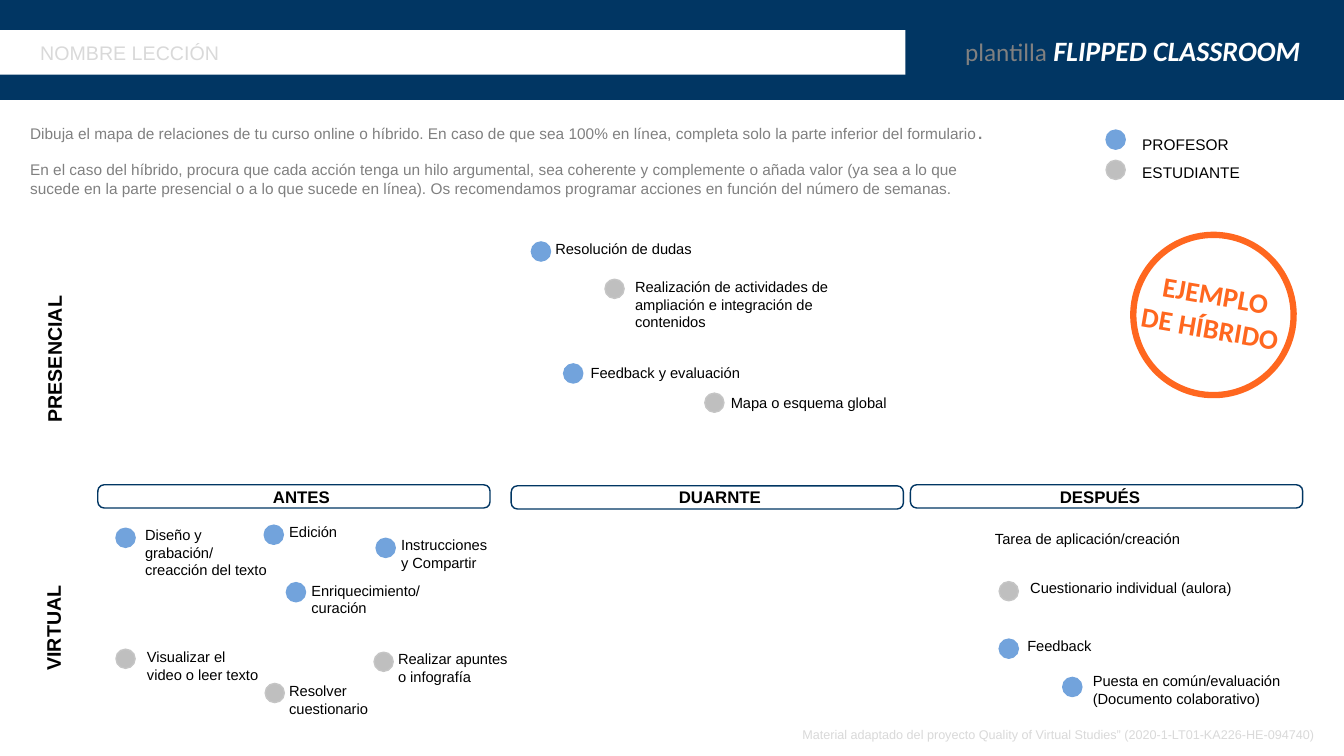
from dataclasses import dataclass

from pptx import Presentation
from pptx.dml.color import RGBColor
from pptx.enum.shapes import MSO_SHAPE
from pptx.enum.text import MSO_ANCHOR, MSO_AUTO_SIZE, PP_ALIGN
from pptx.util import Inches, Pt


@dataclass(frozen=True)
class Theme:
    navy: str = "013663"
    white: str = "FFFFFF"
    black: str = "000000"
    gray: str = "808080"
    pale: str = "D9D9D9"
    orange: str = "FF671F"
    blue: str = "72A3DC"
    silver: str = "BFBFBF"
    rim: str = "C5C5C5"
    sans: str = "Arial"
    head: str = "Calibri"
    big: float = 20
    brand: float = 18
    side: float = 14
    phase: float = 12
    body: float = 11
    item: float = 10.5
    foot: float = 9


class Board:
    def __init__(self, slide, theme):
        self.slide = slide
        self.theme = theme

    def font(self, run, size, color, bold=False, name=None, italic=False):
        font = run.font
        font.name = name or self.theme.sans
        font.size = Pt(size)
        font.bold = bold
        font.italic = italic
        font.color.rgb = RGBColor.from_string(color)

    def shape(self, kind, box, fill=None, line=None, width=1):
        shape = self.slide.shapes.add_shape(kind, *map(Inches, box))
        shape.shadow.inherit = False
        if fill:
            shape.fill.solid()
            shape.fill.fore_color.rgb = RGBColor.from_string(fill)
        else:
            shape.fill.background()
        if line:
            shape.line.color.rgb = RGBColor.from_string(line)
            shape.line.width = Pt(width)
        else:
            shape.line.fill.background()
        return shape

    def text(self, box, words, size, color=None, bold=False, name=None,
             align=PP_ALIGN.LEFT, turn=0):
        shape = self.slide.shapes.add_textbox(*map(Inches, box))
        shape.rotation = turn
        frame = shape.text_frame
        frame.word_wrap = True
        frame.auto_size = MSO_AUTO_SIZE.SHAPE_TO_FIT_TEXT
        frame.text = words
        for par in frame.paragraphs:
            par.alignment = align
            for run in par.runs:
                self.font(run, size, color or self.theme.black, bold, name)
        return frame

    def title(self, box, parts):
        """Fill the title placeholder and lift it above the header band."""
        title = self.slide.shapes.title
        title.left, title.top, title.width, title.height = map(Inches, box)
        frame = title.text_frame
        frame.auto_size = MSO_AUTO_SIZE.NONE
        frame.vertical_anchor = MSO_ANCHOR.TOP
        par = frame.paragraphs[0]
        par.alignment = PP_ALIGN.RIGHT
        for words, size, color, bold, italic in parts:
            run = par.add_run()
            run.text = words
            self.font(run, size, color, bold, self.theme.head, italic)
        title.element.getparent().append(title.element)

    def dot(self, role, left, top):
        look = self.theme
        fill, line = {"teacher": (look.blue, look.blue),
                      "student": (look.silver, look.rim)}[role]
        self.shape(MSO_SHAPE.OVAL, (left, top, 0.19, 0.19), fill, line)

    def phase(self, words, left, top, mid):
        bar = self.shape(MSO_SHAPE.ROUNDED_RECTANGLE, (left, top, 3.89, 0.23),
                         line=self.theme.navy)
        bar.adjustments[0] = 0.27
        self.text((mid - 1.34, 4.78, 2.68, 0.3), words, self.theme.phase,
                  bold=True, align=PP_ALIGN.CENTER)

    def stamp(self, words, turn=9.8):
        look = self.theme
        ring = self.shape(MSO_SHAPE.OVAL, (11.24, 2.33, 1.59, 1.59),
                          line=look.orange, width=4.5)
        ring.rotation = turn
        frame = self.text((11.24, 2.8, 1.58, 0.57), words, look.big,
                          look.orange, True, look.head, PP_ALIGN.CENTER, turn)
        frame.vertical_anchor = MSO_ANCHOR.MIDDLE
        frame.margin_left = frame.margin_right = 0
        frame.margin_top = frame.margin_bottom = Inches(0.01)


INTRO = (
    "Dibuja el mapa de relaciones de tu curso online o híbrido. En caso de "
    "que sea 100% en línea, completa solo la parte inferior del formulario\n"
    "En el caso del híbrido, procura que cada acción tenga un hilo argumental, "
    "sea coherente y complemente o añada valor (ya sea a lo que sucede en la "
    "parte presencial o a lo que sucede en línea). Os recomendamos programar "
    "acciones en función del número de semanas."
)

PHASES = [("ANTES", 0.97, 4.81, 2.99), ("DUARNTE", 5.07, 4.82, 7.14),
          ("DESPUÉS", 9.03, 4.81, 10.91)]

# Words, text box, role, dot left and top
TASKS = [
    ("Resolución de dudas", (5.41, 2.33, 1.92, 0.29), "teacher", 5.27, 2.4),
    ("Realización de actividades de ampliación e integración de contenidos",
     (6.2, 2.71, 2.52, 0.63), "student", 6, 2.77),
    ("Feedback y evaluación", (5.76, 3.56, 1.9, 0.29), "teacher", 5.59, 3.61),
    ("Mapa o esquema global", (7.15, 3.86, 1.9, 0.29), "student", 6.99, 3.9),
    ("Diseño y grabación/ creacción del texto", (1.34, 5.17, 1.43, 0.63),
     "teacher", 1.15, 5.24),
    ("Edición", (2.77, 5.14, 1.31, 0.29), "teacher", 2.62, 5.21),
    ("Instrucciones y Compartir", (3.88, 5.27, 1.07, 0.47),
     "teacher", 3.73, 5.34),
    ("Enriquecimiento/curación", (2.99, 5.72, 1.3, 0.47),
     "teacher", 2.84, 5.78),
    ("Visualizar el video o leer texto", (1.36, 6.38, 1.33, 0.63),
     "student", 1.15, 6.44),
    ("Resolver cuestionario", (2.77, 6.72, 1.3, 0.47), "student", 2.63, 6.78),
    ("Realizar apuntes o infografía", (3.85, 6.4, 1.3, 0.45),
     "student", 3.71, 6.47),
    ("Tarea de aplicación/creación", (9.77, 5.21, 2.12, 0.28), None, 0, 0),
    ("Cuestionario individual (aulora)", (10.12, 5.69, 2.27, 0.28),
     "student", 9.91, 5.77),
    ("Feedback", (10.09, 6.27, 2.12, 0.29), "teacher", 9.91, 6.34),
    ("Puesta en común/evaluación (Documento colaborativo)",
     (10.74, 6.62, 2.21, 0.45), "teacher", 10.54, 6.72),
]


def main():
    deck = Presentation()
    deck.slide_width, deck.slide_height = Inches(13.33), Inches(7.5)
    look = Theme()
    board = Board(deck.slides.add_slide(deck.slide_layouts[5]), look)

    board.shape(MSO_SHAPE.RECTANGLE, (0, 0, 13.33, 0.99), look.navy, look.navy)
    board.title((8.42, 0.28, 4.64, 0.44), [
        ("plantilla", look.brand, look.gray, False, False),
        (" ", look.big, look.white, True, False),
        ("FLIPPED CLASSROOM ", look.big, look.white, True, True),
    ])
    board.shape(MSO_SHAPE.RECTANGLE, (-0.01, 0.3, 8.99, 0.44), look.white)
    board.text((0.3, 0.36, 3.66, 0.34), "NOMBRE LECCIÓN", look.side, look.pale)

    intro = board.text((0.2, 1.18, 9.92, 0.84), INTRO, look.body, look.gray)
    first, second = intro.paragraphs
    stop = first.add_run()
    stop.text = "."
    board.font(stop, look.body, look.gray, True)
    second.space_before = Pt(13)

    legend = board.text((11.23, 1.2, 1.78, 0.63), "PROFESOR\nESTUDIANTE",
                        look.body)
    for par in legend.paragraphs:
        par.line_spacing = 1.5
    board.dot("teacher", 10.97, 1.29)
    board.dot("student", 10.97, 1.59)
    board.stamp("EJEMPLO\nDE HÍBRIDO")

    board.text((-0.35, 3.23, 1.78, 0.34), "PRESENCIAL", look.side, bold=True,
               turn=270)
    board.text((-0.36, 6.06, 1.78, 0.34), "VIRTUAL", look.side, bold=True,
               align=PP_ALIGN.CENTER, turn=270)
    for phase in PHASES:
        board.phase(*phase)
    for words, box, role, left, top in TASKS:
        board.text(box, words, look.item)
        if role:
            board.dot(role, left, top)

    board.text((7.74, 7.16, 5.39, 0.25),
               "Material adaptado del proyecto Quality of Virtual Studies” "
               "(2020-1-LT01-KA226-HE-094740)",
               look.foot, look.pale, align=PP_ALIGN.RIGHT)
    deck.save("out.pptx")


if __name__ == "__main__":
    main()
